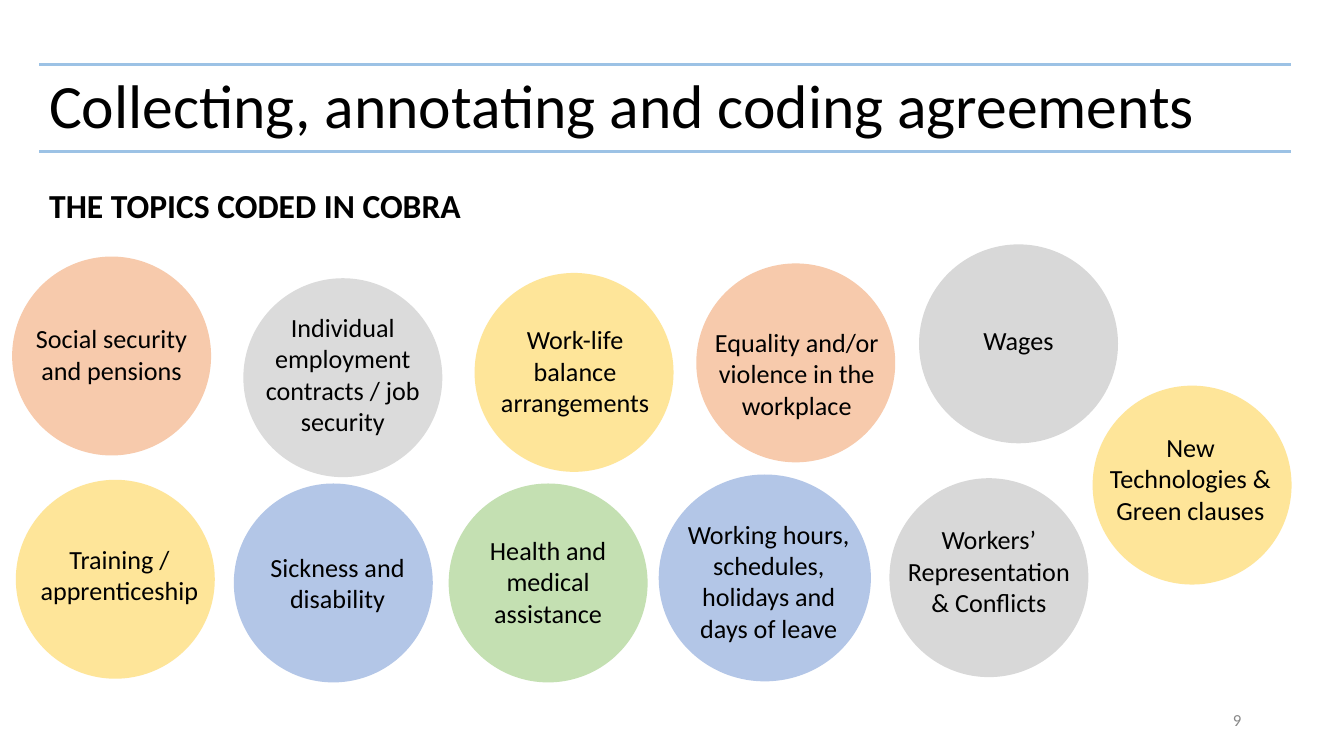
"""Build the slide that shows the coded agreement topics as coloured circles."""
from pptx import Presentation
from pptx.dml.color import RGBColor
from pptx.enum.shapes import MSO_CONNECTOR, MSO_SHAPE
from pptx.enum.text import MSO_ANCHOR, MSO_AUTO_SIZE, PP_ALIGN
from pptx.oxml.ns import qn
from pptx.util import Cm, Pt
from lxml.etree import SubElement

BLACK = RGBColor(0x00, 0x00, 0x00)
NUMBER_GREY = RGBColor(0x88, 0x88, 0x88)
RULE_BLUE = RGBColor(0x9C, 0xC2, 0xE5)
PEACH = RGBColor(0xF7, 0xCA, 0xAC)
YELLOW = RGBColor(0xFE, 0xE5, 0x99)
LIGHT_GREY = RGBColor(0xDB, 0xDB, 0xDB)
GREY = RGBColor(0xD8, 0xD8, 0xD8)
BLUE = RGBColor(0xB3, 0xC6, 0xE7)
GREEN = RGBColor(0xC4, 0xE0, 0xB2)

LEFT, WIDTH = 0.74, 23.65
DIAMETER = 3.76
LINE_HEIGHT, LABEL_PADDING = 0.58, 0.18

# text, colour, circle left and top, label left and top, label lines
TOPICS = [
    ("Social security and pensions", PEACH, (0.23, 4.85), (0.23, 6.02), 2),
    ("Training / apprenticeship", YELLOW, (0.3, 9.07), (0.38, 10.19), 2),
    ("Individual employment contracts / job security", LIGHT_GREY, (4.6, 5.26), (4.6, 5.82), 4),
    ("Sickness and disability", BLUE, (4.42, 9.14), (4.5, 10.34), 2),
    ("Health and medical assistance", GREEN, (8.48, 9.14), (8.48, 10.03), 3),
    ("Work-life balance arrangements", YELLOW, (8.97, 5.16), (8.99, 6.05), 3),
    ("Equality and/or violence in the workplace", PEACH, (13.16, 4.98), (13.18, 6.1), 3),
    ("Wages", GREY, (17.37, 4.62), (17.37, 6.05), 1),
    ("Working hours, schedules, holidays and days of leave", BLUE, (12.45, 8.97), (12.65, 9.73), 4),
    ("Workers’ Representation & Conflicts", GREY, (16.81, 9.04), (16.81, 9.83), 3),
    ("New Technologies & Green clauses", YELLOW, (20.65, 7.29), (20.62, 8.08), 3),
]
CIRCLE_SIZES = {"Working hours, schedules, holidays and days of leave": (4.01, 3.91)}


class Painter:
    """Holds the style and the current page."""

    font_name = "Calibri"
    frame_format = {
        "word_wrap": True,
        "margin_left": Cm(0.19),
        "margin_right": Cm(0.19),
        "margin_top": Cm(0.1),
        "margin_bottom": Cm(0.1),
    }

    def __init__(self, page):
        self.page = page

    def apply(self, target, values):
        for name, value in values.items():
            setattr(target, name, value)

    def text(self, words, left, top, width, height, size, color=BLACK, bold=False,
             anchor=MSO_ANCHOR.MIDDLE, fit=MSO_AUTO_SIZE.NONE, **para_format):
        box = self.page.shapes.add_textbox(Cm(left), Cm(top), Cm(width), Cm(height))
        frame = box.text_frame
        self.apply(frame, {**self.frame_format, "vertical_anchor": anchor, "auto_size": fit})
        para = frame.paragraphs[0]
        self.apply(para, para_format)
        span = para.add_run()
        span.text = words
        self.apply(span.font, {"name": self.font_name, "size": Pt(size), "bold": bold})
        span.font.color.rgb = color

    def rule(self, left, top, width):
        line = self.page.shapes.add_connector(
            MSO_CONNECTOR.STRAIGHT, Cm(left), Cm(top), Cm(left + width), Cm(top))
        line.line.color.rgb = RULE_BLUE
        line.line.width = Pt(1.5)
        SubElement(line._element.spPr, qn("a:effectLst"))

    def circle(self, left, top, width, height, color):
        circle = self.page.shapes.add_shape(
            MSO_SHAPE.OVAL, Cm(left), Cm(top), Cm(width), Cm(height))
        circle.shadow.inherit = False
        circle.fill.solid()
        circle.fill.fore_color.rgb = color
        circle.line.fill.background()

    def topic(self, words, color, circle_at, label_at, lines):
        self.circle(*circle_at, *CIRCLE_SIZES.get(words, (DIAMETER, DIAMETER)), color)
        self.text(words, *label_at, DIAMETER, LABEL_PADDING + lines * LINE_HEIGHT, 14,
                  fit=MSO_AUTO_SIZE.SHAPE_TO_FIT_TEXT, alignment=PP_ALIGN.CENTER)


def main():
    deck = Presentation()
    deck.slide_width, deck.slide_height = Cm(25.4), Cm(14.29)
    painter = Painter(deck.slides.add_slide(deck.slide_layouts[6]))
    painter.text("Collecting, annotating and coding agreements",
                 LEFT, 0.66, WIDTH, 2.77, 33, line_spacing=0.9)
    painter.text("9", 17.93, 13.23, 5.72, 0.76, 9, NUMBER_GREY, alignment=PP_ALIGN.RIGHT)
    for top in (1.22, 2.87):
        painter.rule(LEFT, top, WIDTH)
    painter.text("THE TOPICS CODED IN COBRA", LEFT, 3.4, WIDTH, 0.94, 18,
                 bold=True, anchor=MSO_ANCHOR.TOP)
    for topic in TOPICS:
        painter.topic(*topic)
    deck.save("out.pptx")


if __name__ == "__main__":
    main()
